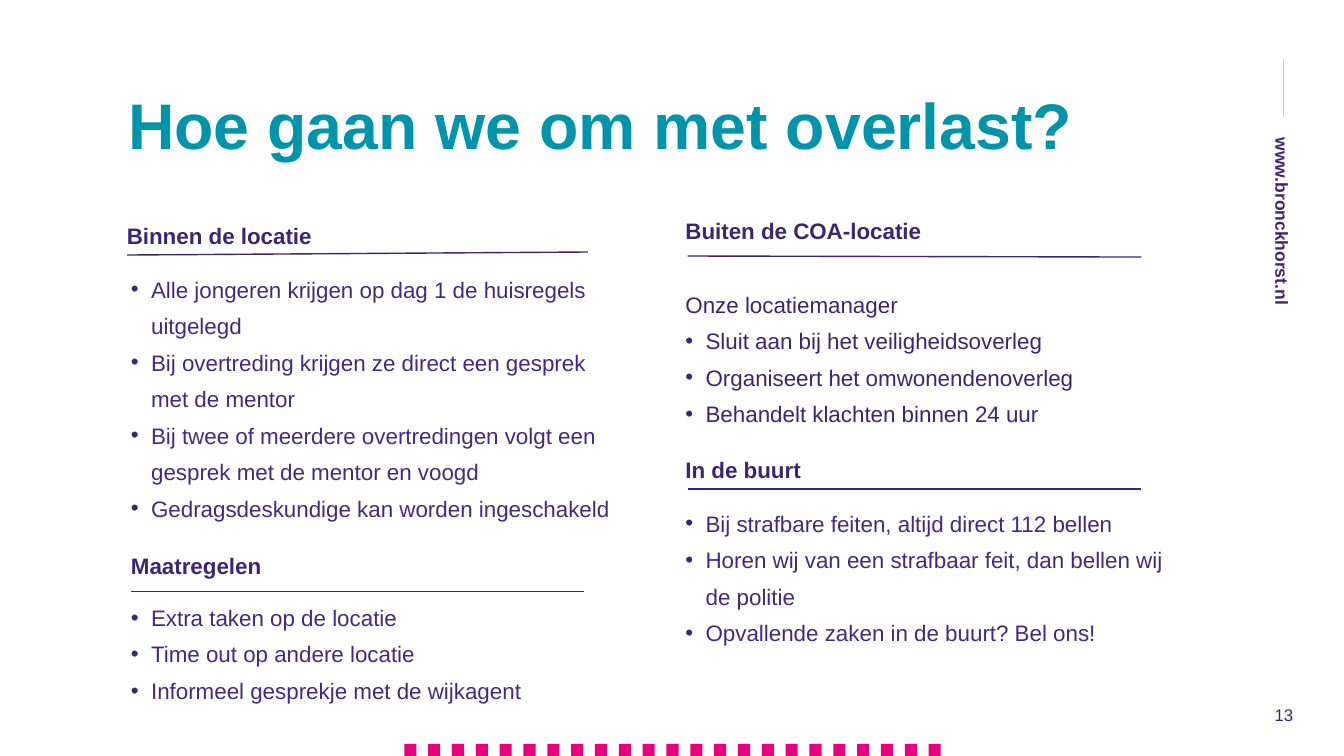
from dataclasses import dataclass
from lxml.etree import SubElement as Sub
from pptx import Presentation
from pptx.dml.color import RGBColor as Rgb
from pptx.enum.shapes import MSO_CONNECTOR as Conn, MSO_SHAPE as Shape
from pptx.enum.text import MSO_ANCHOR as Anchor, PP_ALIGN as Align
from pptx.oxml.ns import qn
from pptx.util import Inches, Pt


@dataclass(frozen=True)
class Theme:
    font: str = "Arial"
    ink: str = "392772"
    body: str = "402C7F"
    teal: str = "0094AB"
    pink: str = "E6007E"
    sand: str = "D0C0A7"
    title: float = 46
    text: float = 16
    site: float = 12.5
    page: float = 12
    rule: float = 1
    mark: float = 1.25
    lead: float = 1.36
    gap: float = 52


look = Theme()

title = "Hoe gaan we om met overlast?"
site = "www.bronckhorst.nl"
page = "13"

heads = [
    ("Binnen de locatie", (1.16, 2.15, 2.06, 0.37)),
    ("Maatregelen", (1.2, 5.43, 1.51, 0.37)),
    ("Buiten de COA-locatie", (6.7, 2.11, 2.57, 0.37)),
    ("In de buurt", (6.7, 4.48, 1.36, 0.37)),
]

rules = [
    (1.26, 2.53, 5.83, 2.5),
    (1.3, 5.87, 5.79, 5.87),
    (6.82, 2.54, 11.32, 2.55),
    (6.82, 4.85, 11.32, 4.85),
]

inside = [
    "Alle jongeren krijgen op dag 1 de huisregels uitgelegd",
    "Bij overtreding krijgen ze direct een gesprek met de mentor",
    "Bij twee of meerdere overtredingen volgt een gesprek met de mentor en voogd",
    "Gedragsdeskundige kan worden ingeschakeld",
]
steps = [
    "Extra taken op de locatie",
    "Time out op andere locatie",
    "Informeel gesprekje met de wijkagent",
]
intro = "Onze locatiemanager"
tasks = [
    "Sluit aan bij het veiligheidsoverleg",
    "Organiseert het omwonendenoverleg",
    "Behandelt klachten binnen 24 uur",
]
area = [
    "Bij strafbare feiten, altijd direct 112 bellen",
    "Horen wij van een strafbaar feit, dan bellen wij de politie",
    "Opvallende zaken in de buurt? Bel ons!",
]

deck = Presentation()
deck.slide_width, deck.slide_height = Inches(13.33), Inches(7.5)
slide = deck.slides.add_slide(deck.slide_layouts[6])


def frame(place, wrap=True, pad=True, turn=0, anchor=Anchor.TOP):
    box = slide.shapes.add_textbox(*map(Inches, place))
    box.rotation = turn
    part = box.text_frame
    part.word_wrap = wrap
    part.vertical_anchor = anchor
    if not pad:
        part.margin_left = part.margin_right = 0
        part.margin_top = part.margin_bottom = 0
    return part


def write(part, text, size=look.text, color=look.ink, bold=False,
          lead=None, align=Align.LEFT, dot=False, gap=0):
    first = part.paragraphs[0]
    para = part.add_paragraph() if first.runs else first
    if dot:
        props = para._p.get_or_add_pPr()
        props.set("marL", str(Inches(0.2)))
        props.set("indent", str(Inches(-0.2)))
        Sub(Sub(props, qn("a:buClr")), qn("a:srgbClr"), val=look.ink)
        Sub(props, qn("a:buFont"), typeface=look.font)
        Sub(props, qn("a:buChar"), char="•")
    para.alignment = align
    if lead:
        para.line_spacing = lead
    if gap:
        para.space_before = Pt(gap)
    run = para.add_run()
    run.text = text
    run.font.name = look.font
    run.font.size = Pt(size)
    run.font.bold = bold
    run.font.color.rgb = Rgb.from_string(color)


def points(part, items, color, gap=0):
    for i, item in enumerate(items):
        write(part, item, color=color, lead=look.lead, dot=True,
              gap=0 if i else gap)


def rule(ends, color=look.ink, width=look.rule):
    line = slide.shapes.add_connector(Conn.STRAIGHT, *map(Inches, ends))
    line.line.color.rgb = Rgb.from_string(color)
    line.line.width = Pt(width)
    Sub(line._element.spPr, qn("a:effectLst"))


count, start, end, side = 23, 4.01, 9.21, 0.12
pitch = (end - start) / (count - 1)
for i in range(count):
    place = (start + i * pitch, 7.38, side, side)
    block = slide.shapes.add_shape(Shape.RECTANGLE, *map(Inches, place))
    block.shadow.inherit = False
    block.fill.solid()
    block.fill.fore_color.rgb = Rgb.from_string(look.pink)
    block.line.fill.background()

rule((12.73, 0.59, 12.73, 1.16), look.sand, look.mark)
write(frame((11.17, 2.83, 3.18, 0.25), pad=False, turn=90), site,
      size=look.site, bold=True, lead=1.3)
write(frame((12.53, 6.89, 0.41, 0.4), pad=False, anchor=Anchor.MIDDLE), page,
      size=look.page, align=Align.CENTER)
write(frame((1.27, 0.95, 11.3, 1.18), pad=False), title,
      size=look.title, color=look.teal, bold=True, lead=0.87)

left = frame((1.2, 2.59, 4.99, 4.5))
points(left, inside, look.body)
points(left, steps, look.body, gap=look.gap)

right = frame((6.7, 2.74, 4.99, 3.79))
write(right, intro, lead=look.lead)
points(right, tasks, look.ink)
points(right, area, look.body, gap=look.gap)

for text, place in heads:
    write(frame(place, wrap=False), text, bold=True)
for ends in rules:
    rule(ends)

deck.save("out.pptx")
